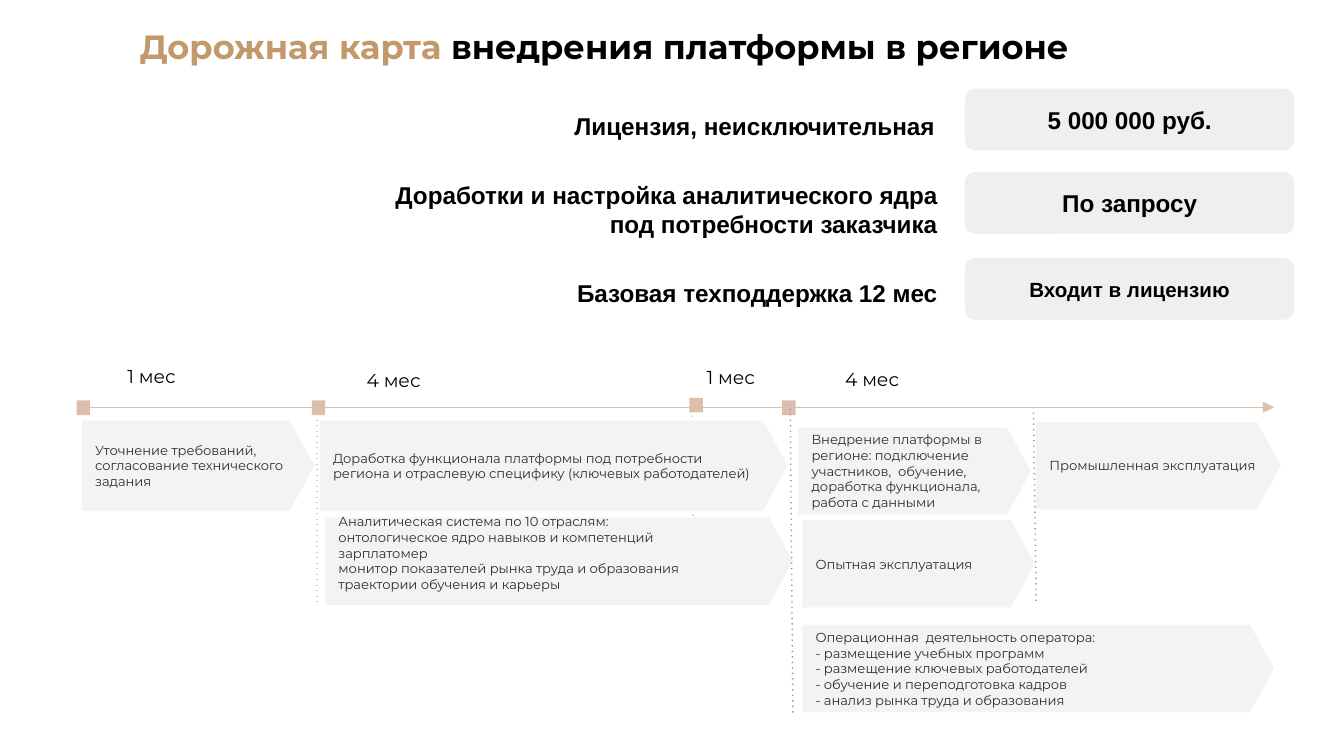
from pptx import Presentation
from pptx.dml.color import RGBColor
from pptx.enum.shapes import MSO_CONNECTOR, MSO_SHAPE as Preset
from pptx.enum.text import MSO_ANCHOR as Anchor, PP_ALIGN as Align
from pptx.oxml.ns import qn
from pptx.util import Inches, Pt
from lxml.etree import SubElement

BODY_FONT = "Montserrat"
PRICE_FONT = "Arial"
BLACK = "000000"
GOLD = "C3996B"
SAND = "DDBEAD"
GREY = "CCCCCC"
BLUE = "6D9EEB"

PRICES = [
    ("Лицензия, неисключительная ", (3, 0.73, 4.1, 0.37), "5 000 000 руб.", 0.66, 13),
    ("Доработки и настройка аналитического ядра под потребности заказчика",
     (2.67, 1.24, 4.4, 0.37), "По запросу", 1.28, 13),
    ("Базовая техподдержка 12 мес", (4.11, 1.97, 2.96, 0.5), "Входит в лицензию", 1.92, 11),
]

DURATIONS = [
    ("1 мес", (0.85, 2.62, 0.97, 0.49)),
    ("4 мес", (2.63, 2.65, 0.97, 0.49)),
    ("1 мес", (5.16, 2.63, 0.66, 0.42)),
    ("4 мес", (6.19, 2.64, 0.97, 0.49)),
]

MILESTONES = [(0.57, 2.98), (2.32, 2.98), (5.13, 2.96), (5.82, 2.98)]

STAGES = [
    ("Уточнение требований, согласование технического задания", (0.61, 3.13, 1.73, 0.67)),
    ("Доработка функционала платформы под потребности региона и отраслевую "
     "специфику (ключевых работодателей)", (2.38, 3.13, 3.48, 0.67)),
    ("Внедрение платформы в регионе: подключение участников,  обучение, "
     "доработка функционала, работа с данными", (5.94, 3.18, 1.73, 0.65)),
    ("Промышленная эксплуатация", (7.71, 3.14, 1.82, 0.65)),
    ("Опытная эксплуатация", (5.97, 3.87, 1.73, 0.65)),
    ("Операционная  деятельность оператора: \n"
     "- размещение учебных программ\n"
     "- размещение ключевых работодателей\n"
     "- обучение и переподготовка кадров\n"
     "- анализ рынка труда и образования", (5.97, 4.65, 3.51, 0.65)),
]

ANALYTICS = (
    "Аналитическая система по 10 отраслям: \n"
    "онтологическое ядро навыков и компетенций\n"
    "зарплатомер\n"
    "монитор показателей рынка труда и образования\n"
    "траектории обучения и карьеры"
)


def color(value):
    return RGBColor.from_string(value)


def style_run(run, size, font, ink, bold=False):
    run.font.size = Pt(size)
    run.font.name = font
    run.font.color.rgb = color(ink)
    run.font.bold = bold


def write(shape, text, size, font, ink=BLACK, bold=False, align=Align.LEFT, anchor=Anchor.TOP):
    frame = shape.text_frame
    frame.word_wrap = True
    frame.vertical_anchor = anchor
    frame.margin_left = frame.margin_right = Inches(0.1)
    frame.margin_top = frame.margin_bottom = Inches(0.1)
    frame.text = text
    for paragraph in frame.paragraphs:
        paragraph.alignment = align
        for run in paragraph.runs:
            style_run(run, size, font, ink, bold)


def add_text_box(slide, box):
    return slide.shapes.add_textbox(*map(Inches, box))


def add_block(slide, preset, box, fill, adjustment=None):
    shape = slide.shapes.add_shape(preset, *map(Inches, box))
    shape.shadow.inherit = False
    shape.fill.solid()
    shape.fill.fore_color.rgb = color(fill)
    shape.line.fill.background()
    if adjustment is not None:
        shape.adjustments[0] = adjustment
    return shape


def add_line(slide, start, end, ink, ending, value):
    points = map(Inches, (*start, *end))
    connector = slide.shapes.add_connector(MSO_CONNECTOR.STRAIGHT, *points)
    connector.line.color.rgb = color(ink)
    connector.line.width = Pt(0.75)
    properties = connector.element.spPr
    detail = SubElement(properties.find(qn("a:ln")), qn(ending))
    detail.set("type" if ending == "a:tailEnd" else "val", value)
    SubElement(properties, qn("a:effectLst"))


def add_divider(slide, start, end, ink):
    add_line(slide, start, end, ink, "a:prstDash", "dot")


def add_stage(slide, text, box):
    shape = add_block(slide, Preset.PENTAGON, box, "F3F3F3", 0.274)
    write(shape, text, 7, BODY_FONT, "2A2F37", anchor=Anchor.MIDDLE)
    return shape


def add_duration(slide, text, box):
    shape = add_text_box(slide, box)
    write(shape, text, 10, BODY_FONT)
    shape.text_frame.margin_top = Inches(0.12)


def add_title(slide):
    frame = add_text_box(slide, (0.97, 0.15, 8.42, 0.44)).text_frame
    frame.word_wrap = True
    frame.margin_left = frame.margin_right = Inches(0.07)
    frame.margin_top = frame.margin_bottom = Inches(0.04)
    parts = [("Дорожная карта ", GOLD), ("внедрения платформы в регионе", BLACK)]
    for text, ink in parts:
        run = frame.paragraphs[0].add_run()
        run.text = text
        style_run(run, 18, BODY_FONT, ink, True)


def add_price(slide, label, label_box, price, top, size):
    write(add_text_box(slide, label_box), label, 13, PRICE_FONT, bold=True, align=Align.RIGHT)
    card = add_block(slide, Preset.ROUNDED_RECTANGLE, (7.18, top, 2.45, 0.46), "EFEFEF", 0.167)
    write(card, price, size, PRICE_FONT, bold=True, align=Align.CENTER, anchor=Anchor.MIDDLE)


def add_timeline(slide):
    add_divider(slide, (2.36, 3.04), (2.36, 4.5), GREY)
    add_line(slide, (0.57, 3.03), (9.48, 3.03), SAND, "a:tailEnd", "triangle")
    add_divider(slide, (5.15, 3.05), (5.16, 4.48), GREY)
    add_divider(slide, (7.69, 3.07), (7.71, 4.5), BLUE)
    for left, top in MILESTONES:
        add_block(slide, Preset.RECTANGLE, (left, top, 0.1, 0.11), SAND)
    for text, box in STAGES:
        add_stage(slide, text, box)
    analytics = add_stage(slide, ANALYTICS, (2.42, 3.85, 3.48, 0.65))
    analytics.text_frame.margin_bottom = Inches(0.22)
    add_divider(slide, (5.88, 3.04), (5.9, 5.33), BLUE)
    for text, box in DURATIONS:
        add_duration(slide, text, box)


def main():
    presentation = Presentation()
    presentation.slide_width = Inches(10)
    presentation.slide_height = presentation.slide_width * 9 // 16
    slide = presentation.slides.add_slide(presentation.slide_layouts[6])
    add_title(slide)
    add_timeline(slide)
    for price in PRICES:
        add_price(slide, *price)
    presentation.save("out.pptx")


if __name__ == "__main__":
    main()
